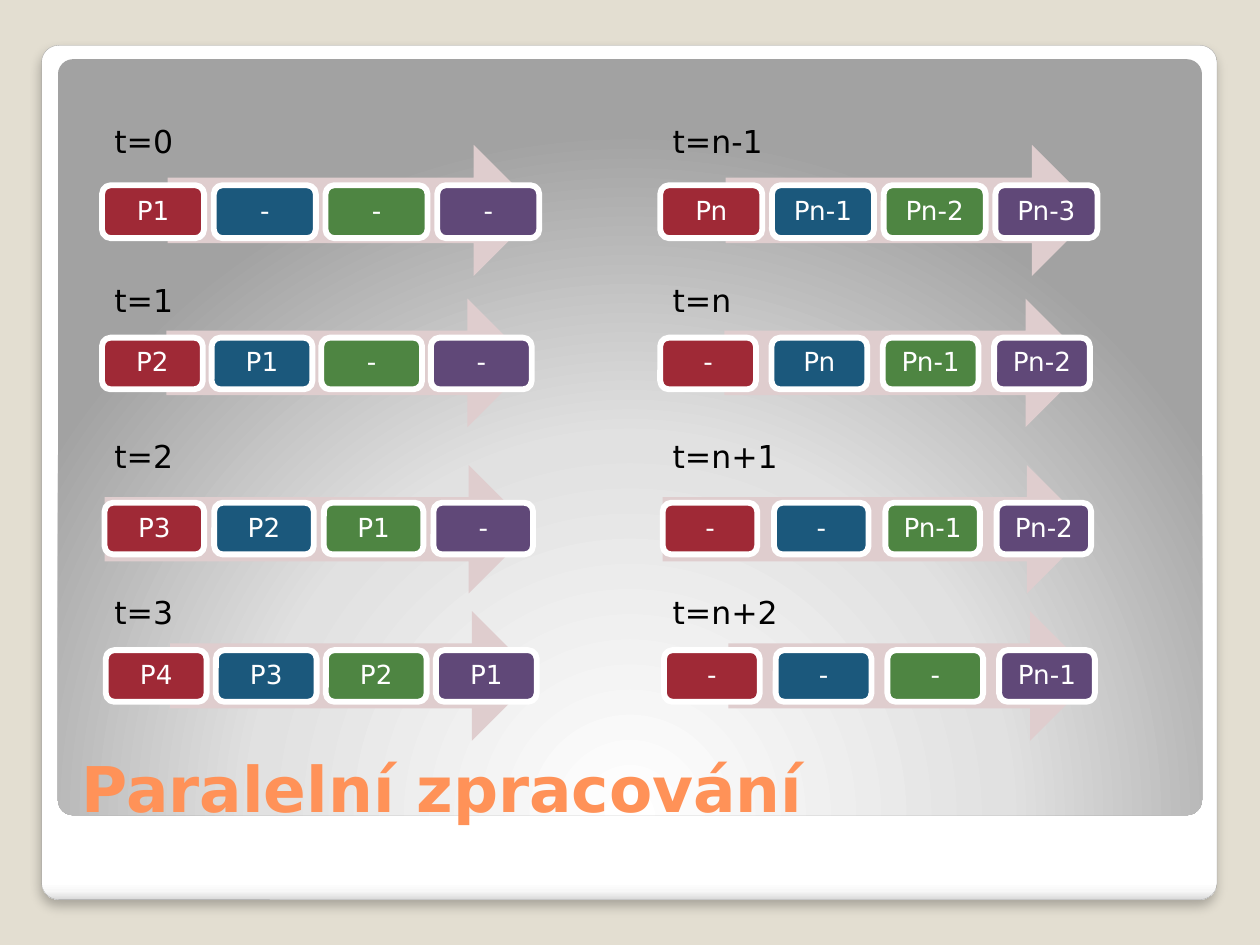
from pptx import Presentation
from pptx.dml.color import RGBColor
from pptx.enum.shapes import MSO_SHAPE
from pptx.enum.text import MSO_ANCHOR, MSO_AUTO_SIZE, PP_ALIGN
from pptx.oxml import parse_xml
from pptx.oxml.ns import nsdecls, qn
from pptx.util import Inches, Pt

ROUNDED = MSO_SHAPE.ROUNDED_RECTANGLE
ARROW = MSO_SHAPE.RIGHT_ARROW
LEFT, CENTER = PP_ALIGN.LEFT, PP_ALIGN.CENTER
TOP, MIDDLE, BOTTOM = MSO_ANCHOR.TOP, MSO_ANCHOR.MIDDLE, MSO_ANCHOR.BOTTOM
FIXED, GROW = MSO_AUTO_SIZE.NONE, MSO_AUTO_SIZE.SHAPE_TO_FIT_TEXT

THEME = {
    "font": "DejaVu Sans",
    "title_size": 36,
    "label_size": 18,
    "stage_size": 15,
    "background": "E3DED1",
    "title": "FF9258",
    "label": "000000",
    "arrow": "DFCDCE",
    "white": "FFFFFF",
    "edge": "A4A4A4",
    "stages": ["9F2936", "1B587C", "4E8542", "604878"],
    "frame_stops": [(0, "FFFFFF"), (98, "FFFFFF"), (99, "F7F7F7"), (100, "DADADA")],
    "panel_stops": [(0, "FFFFFF"), (55, "E1E1E1"), (100, "A2A2A2")],
}


def write(shape, text, *, size, color, bold=False, align=LEFT, anchor=TOP,
          wrap=True, fit=FIXED, inset=None, spacing=None):
    frame = shape.text_frame
    frame.word_wrap = wrap
    frame.auto_size = fit
    frame.vertical_anchor = anchor
    if inset is not None:
        frame.margin_left = frame.margin_right = Inches(inset)
        frame.margin_top = frame.margin_bottom = Inches(inset)
    paragraph = frame.paragraphs[0]
    paragraph.alignment = align
    paragraph.line_spacing = spacing
    run = paragraph.add_run()
    run.text = text
    run.font.name = THEME["font"]
    run.font.size = Pt(size)
    run.font.bold = bold
    run.font.color.rgb = RGBColor.from_string(color)


def add_panel(shapes, box, stops, direction):
    panel = shapes.add_shape(ROUNDED, *map(Inches, box))
    panel.adjustments[0] = 0.02
    panel.shadow.inherit = False
    stop_xml = "".join(
        f'<a:gs pos="{position * 1000}"><a:srgbClr val="{color}"/></a:gs>'
        for position, color in stops
    )
    panel.element.spPr.insert(2, parse_xml(
        f'<a:gradFill {nsdecls("a")} rotWithShape="1">'
        f"<a:gsLst>{stop_xml}</a:gsLst>{direction}</a:gradFill>"
    ))
    return panel


prs = Presentation()
prs.slide_width, prs.slide_height = Inches(10), Inches(7.5)
slide = prs.slides.add_slide(prs.slide_layouts[5])
slide.background.fill.solid()
slide.background.fill.fore_color.rgb = RGBColor.from_string(THEME["background"])

card = add_panel(slide.shapes, (0.33, 0.36, 9.33, 6.78), THEME["frame_stops"],
                 '<a:lin ang="5400000" scaled="0"/>')
card.line.color.rgb = RGBColor.from_string(THEME["edge"])
card.line.width = Pt(0.16)
card.element.spPr.find(qn("a:effectLst")).append(parse_xml(
    f'<a:outerShdw {nsdecls("a")} blurRad="76200" dist="50800" dir="5400000" '
    'algn="tl" rotWithShape="0"><a:srgbClr val="000000">'
    '<a:alpha val="25000"/></a:srgbClr></a:outerShdw>'
))
backdrop = add_panel(slide.shapes, (0.46, 0.47, 9.08, 6), THEME["panel_stops"],
                     '<a:path path="circle">'
                     '<a:fillToRect l="50000" t="175000" r="50000" b="-75000"/></a:path>')
backdrop.line.fill.background()

title = slide.shapes.title
slide.shapes.element.append(title.element)
title.left, title.top = Inches(0.55), Inches(5.45)
title.width, title.height = Inches(8.95), Inches(1.15)
write(title, "Paralelní zpracování", size=THEME["title_size"], color=THEME["title"],
      bold=True, anchor=BOTTOM)

LABEL_TOPS = [0.92, 2.18, 3.42, 4.66]
ARROWS = [
    (1.33, 1.15, 2.95, 1.04),
    (1.32, 2.37, 2.9, 1.02),
    (0.83, 3.69, 3.4, 1.02),
    (1.35, 4.85, 2.91, 1.03),
]
STAGE_BOXES = [(0.81, 1.47, 0.42), (0.81, 2.68, 0.41), (0.83, 3.99, 0.41), (0.84, 5.16, 0.41)]
COLUMNS = [
    (0, [0.81, 0.8, 0.79, 0.8], [
        ("t=0", ["P1", "-", "-", "-"]),
        ("t=1", ["P2", "P1", "-", "-"]),
        ("t=2", ["P3", "P2", "P1", "-"]),
        ("t=3", ["P4", "P3", "P2", "P1"]),
    ]),
    (4.43, [0.81, 0.76, 0.75, 0.76], [
        ("t=n-1", ["Pn", "Pn-1", "Pn-2", "Pn-3"]),
        ("t=n", ["-", "Pn", "Pn-1", "Pn-2"]),
        ("t=n+1", ["-", "-", "Pn-1", "Pn-2"]),
        ("t=n+2", ["-", "-", "-", "Pn-1"]),
    ]),
]
LABEL_WIDTHS = {3: 0.67, 5: 0.94}

for offset, stage_widths, steps in COLUMNS:
    rows = zip(steps, stage_widths, LABEL_TOPS, ARROWS, STAGE_BOXES)
    for (time, processes), stage_width, label_top, arrow_box, stage_box in rows:
        arrow_left, arrow_top, arrow_width, arrow_height = arrow_box
        stage_left, stage_top, stage_height = stage_box
        pitch = (arrow_left + arrow_width - stage_left - stage_width) / 3

        pipeline = slide.shapes.add_group_shape()
        arrow = pipeline.shapes.add_shape(
            ARROW, Inches(offset + arrow_left), Inches(arrow_top),
            Inches(arrow_width), Inches(arrow_height))
        arrow.shadow.inherit = False
        arrow.fill.solid()
        arrow.fill.fore_color.rgb = RGBColor.from_string(THEME["arrow"])
        arrow.line.fill.background()

        for index, (process, color) in enumerate(zip(processes, THEME["stages"])):
            stage = pipeline.shapes.add_shape(
                ROUNDED, Inches(offset + stage_left + index * pitch), Inches(stage_top),
                Inches(stage_width), Inches(stage_height))
            stage.shadow.inherit = False
            stage.fill.solid()
            stage.fill.fore_color.rgb = RGBColor.from_string(color)
            stage.line.color.rgb = RGBColor.from_string(THEME["white"])
            stage.line.width = Pt(3.35)
            write(stage, process, size=THEME["stage_size"], color=THEME["white"],
                  align=CENTER, anchor=MIDDLE, inset=0.06, spacing=0.9)

        label = slide.shapes.add_textbox(
            Inches(offset + 0.81), Inches(label_top),
            Inches(1.04 if "+" in time else LABEL_WIDTHS[len(time)]), Inches(0.4))
        write(label, time, size=THEME["label_size"], color=THEME["label"],
              wrap=False, fit=GROW)

prs.save("out.pptx")
